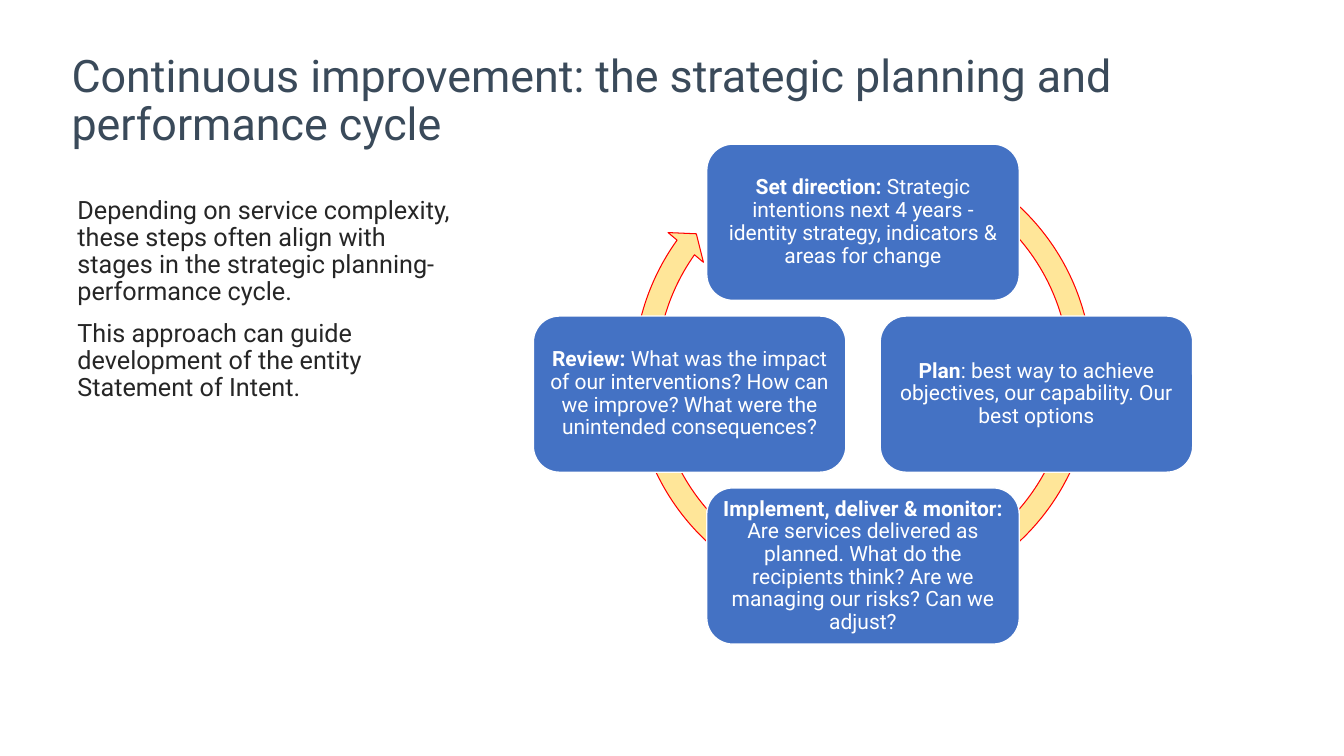
from pptx import Presentation
from pptx.dml.color import RGBColor
from pptx.enum.shapes import MSO_SHAPE
from pptx.enum.text import MSO_ANCHOR, PP_ALIGN
from pptx.util import Inches, Pt

ROUND = MSO_SHAPE.ROUNDED_RECTANGLE
ARROW = MSO_SHAPE.CIRCULAR_ARROW
TOP, MIDDLE, BOTTOM = MSO_ANCHOR.TOP, MSO_ANCHOR.MIDDLE, MSO_ANCHOR.BOTTOM
LEFT, CENTER = PP_ALIGN.LEFT, PP_ALIGN.CENTER

FONT = "Roboto"
COLORS = {
    "title": "3A4A5A",
    "body": "262626",
    "step": "4472C4",
    "white": "FFFFFF",
    "ring": "FFE699",
    "edge": "FF0000",
}

TITLE = "Continuous improvement: the strategic planning and performance cycle"
NOTES = [
    "Depending on service complexity, these steps often align with stages "
    "in the strategic planning-performance cycle.",
    "This approach can guide development of the entity Statement of Intent.",
]
# Column and row offset from the centre, bold lead, remaining text
STEPS = [
    (0, -1, "Set direction: ", "Strategic intentions next 4 years - "
     "identity strategy, indicators & areas for change"),
    (1, 0, "Plan", ": best way to achieve objectives, our capability. "
     "Our best options"),
    (0, 1, "Implement, deliver & monitor: ", "Are services delivered as "
     "planned. What do the recipients think? Are we managing our risks? "
     "Can we adjust?"),
    (-1, 0, "Review: ", "What was the impact of our interventions? How can "
     "we improve? What were the unintended consequences?"),
]


def color(name):
    return RGBColor.from_string(COLORS[name])


def frame(shape, anchor, inset=None):
    text = shape.text_frame
    text.word_wrap = True
    text.vertical_anchor = anchor
    if inset is not None:
        text.margin_left = text.margin_right = Inches(inset)
        text.margin_top = text.margin_bottom = Inches(inset)
    return text


def write(para, runs, size, tint, align=LEFT):
    para.alignment = align
    para.line_spacing = 0.9
    for words, bold in runs:
        run = para.add_run()
        run.text = words
        run.font.name = FONT
        run.font.size = Pt(size)
        run.font.bold = bold
        run.font.color.rgb = color(tint)


def paint(shape, fill, line, width):
    shape.shadow.inherit = False
    shape.fill.solid()
    shape.fill.fore_color.rgb = color(fill)
    shape.line.color.rgb = color(line)
    shape.line.width = Pt(width)


def add_title(slide, x, y, w, h):
    title = slide.shapes.title
    title.left, title.top = Inches(x), Inches(y)
    title.width, title.height = Inches(w), Inches(h)
    text = frame(title, BOTTOM)
    write(text.paragraphs[0], [(TITLE, False)], 32, "title")


def add_notes(slide, x, y, w, h):
    box = slide.shapes.add_textbox(Inches(x), Inches(y), Inches(w), Inches(h))
    text = frame(box, TOP)
    for i, words in enumerate(NOTES):
        para = text.add_paragraph() if i else text.paragraphs[0]
        if i:
            para.space_before = Pt(10)
        write(para, [(words, False)], 18, "body")


def add_cycle(slide, x, y, w, h):
    # Ring arrow behind the steps
    size = 4.78
    ring = slide.shapes.add_shape(
        ARROW, Inches(x + (w - size) / 2), Inches(y - 0.11),
        Inches(size), Inches(size))
    for i, value in enumerate([0.047, 2.729, 129.312, 179.632, 0.048]):
        ring.adjustments[i] = value
    paint(ring, "ring", "edge", 0.75)

    # Four steps around the centre
    wide, high = 3.1, 1.55
    dx, dy = (w - wide) / 2, (h - high) / 2
    for col, row, lead, rest in STEPS:
        step = slide.shapes.add_shape(
            ROUND, Inches(x + dx * (1 + col)), Inches(y + dy * (1 + row)),
            Inches(wide), Inches(high))
        paint(step, "step", "white", 1)
        text = frame(step, MIDDLE, 0.06)
        write(text.paragraphs[0], [(lead, True), (rest, False)],
              15, "white", CENTER)


def main():
    deck = Presentation()
    deck.slide_width, deck.slide_height = Inches(13.33), Inches(7.5)
    slide = deck.slides.add_slide(deck.slide_layouts[5])
    add_title(slide, 0.61, 0.93, 12.06, 0.61)
    add_notes(slide, 0.67, 1.91, 3.93, 1.19)
    add_cycle(slide, 5.29, 1.43, 6.54, 4.96)
    deck.save("out.pptx")


if __name__ == "__main__":
    main()
